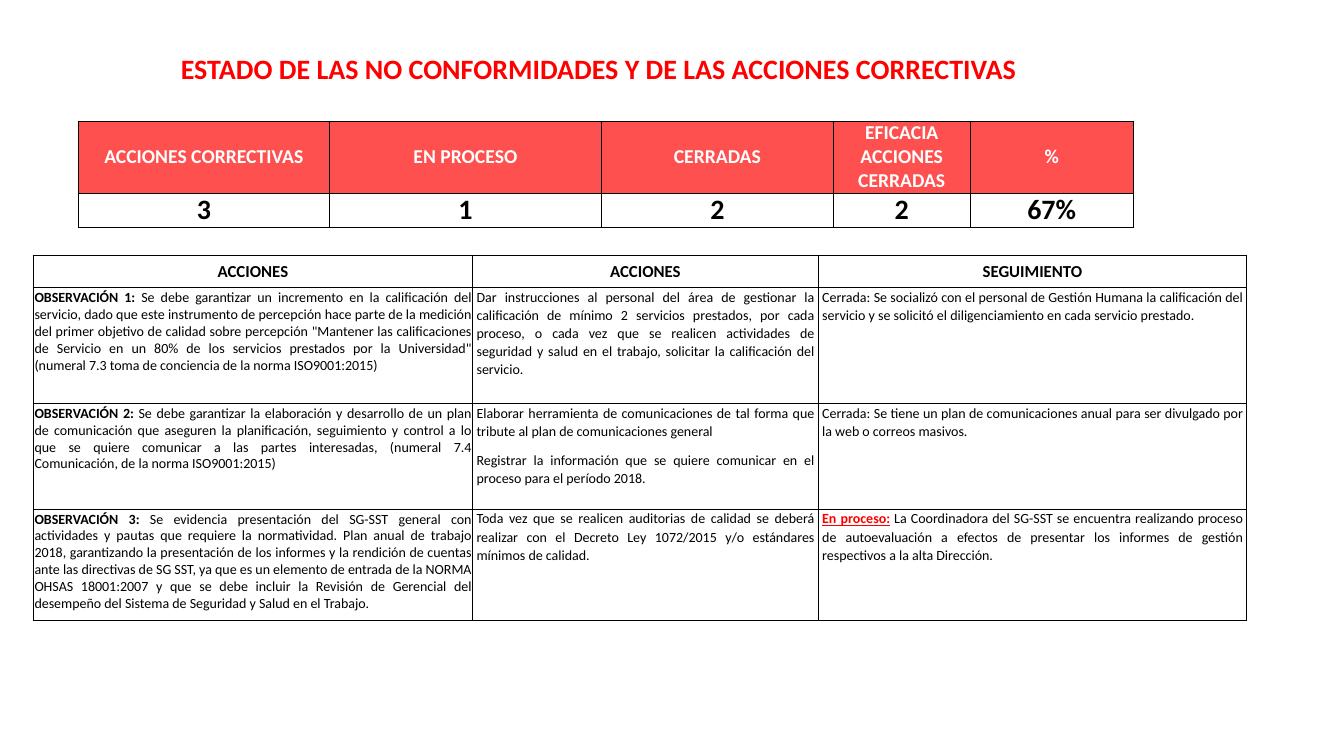
from lxml.etree import SubElement
from pptx import Presentation
from pptx.dml.color import RGBColor
from pptx.enum.text import MSO_ANCHOR, PP_ALIGN
from pptx.oxml.ns import qn
from pptx.util import Cm, Pt

COLORS = {"red": "FF0000", "header": "FF5050", "white": "FFFFFF", "black": "000000"}
FONT = "Calibri"

TITLE = "ESTADO DE LAS NO CONFORMIDADES Y DE LAS ACCIONES CORRECTIVAS"

SUMMARY = [
    ("ACCIONES CORRECTIVAS", "EN PROCESO", "CERRADAS", "EFICACIA ACCIONES CERRADAS", "%"),
    ("3", "1", "2", "2", "67%"),
]
SUMMARY_COLS = (6.32, 6.86, 5.84, 3.45, 4.11)
SUMMARY_ROWS = (1.81, 0.86)

ACTION_HEADERS = ("ACCIONES", "ACCIONES", "SEGUIMIENTO")
# Each row: observation (label, text), action paragraphs, follow-up (label, text)
ACTIONS = [
    (
        ("OBSERVACIÓN 1:", "Se debe garantizar un incremento en la calificación del servicio, dado que "
         "este instrumento de percepción hace parte de la medición del primer objetivo de calidad sobre "
         "percepción \"Mantener las calificaciones de Servicio en un 80% de los servicios prestados por "
         "la Universidad\" (numeral 7.3 toma de conciencia de la norma ISO9001:2015)"),
        ["Dar instrucciones al personal del área de gestionar la calificación de mínimo 2 servicios "
         "prestados, por cada proceso, o cada vez que se realicen actividades de seguridad y salud en el "
         "trabajo, solicitar la calificación del servicio."],
        ("", "Cerrada: Se socializó con el personal de Gestión Humana la calificación del servicio y se "
         "solicitó el diligenciamiento en cada servicio prestado."),
    ),
    (
        ("OBSERVACIÓN 2:", "Se debe garantizar la elaboración y desarrollo de un plan de comunicación que "
         "aseguren la planificación, seguimiento y control a lo que se quiere comunicar a las partes "
         "interesadas, (numeral 7.4 Comunicación, de la norma ISO9001:2015)"),
        ["Elaborar herramienta de comunicaciones de tal forma que tribute al plan de comunicaciones general",
         "Registrar la información que se quiere comunicar en el proceso para el período 2018."],
        ("", "Cerrada: Se tiene un plan de comunicaciones anual para ser divulgado por la web o correos "
         "masivos."),
    ),
    (
        ("OBSERVACIÓN 3:", "Se evidencia presentación del SG-SST general con actividades y pautas que "
         "requiere la normatividad. Plan anual de trabajo 2018, garantizando la presentación de los "
         "informes y la rendición de cuentas ante las directivas de SG SST, ya que es un elemento de "
         "entrada de la NORMA OHSAS 18001:2007 y que se debe incluir la Revisión de Gerencial del "
         "desempeño del Sistema de Seguridad y Salud en el Trabajo."),
        ["Toda vez que se realicen auditorias de calidad se deberá realizar con el Decreto Ley 1072/2015 "
         "y/o estándares mínimos de calidad."],
        ("En proceso:", "La Coordinadora del SG-SST se encuentra realizando proceso de autoevaluación a "
         "efectos de presentar los informes de gestión respectivos a la alta Dirección."),
    ),
]
ACTION_COLS = (11.07, 8.71, 10.8)
ACTION_ROWS = (0.82, 2.92, 2.67, 2.79)


def rgb(name):
    return RGBColor.from_string(COLORS[name])


def format_paragraph(p, size, color="black", bold=False, align=PP_ALIGN.CENTER, spacing=1.0, after=0):
    p.alignment, p.line_spacing, p.space_after = align, spacing, Pt(after)
    f = p.font
    f.name, f.size, f.bold = FONT, Pt(size), bold
    f.color.rgb = rgb(color)


def add_grid(slide, left, top, cols, rows):
    frame = slide.shapes.add_table(len(rows), len(cols), Cm(left), Cm(top), Cm(sum(cols)), Cm(sum(rows)))
    table = frame.table
    table.first_row = table.horz_banding = False
    for column, width in zip(table.columns, cols):
        column.width = Cm(width)
    for row, height in zip(table.rows, rows):
        row.height = Cm(height)
    return table


def format_cell(cell, line, fill="white", side=0, top=0, anchor=MSO_ANCHOR.TOP):
    cell.margin_left = cell.margin_right = Cm(side)
    cell.margin_top, cell.margin_bottom = Cm(top), 0
    cell.vertical_anchor = anchor
    tcPr = cell._tc.get_or_add_tcPr()
    for edge in ("a:lnL", "a:lnR", "a:lnT", "a:lnB"):
        ln = SubElement(tcPr, qn(edge), w=str(Pt(line)))
        SubElement(SubElement(ln, qn("a:solidFill")), qn("a:srgbClr"), val=COLORS["black"])
    cell.fill.solid()
    cell.fill.fore_color.rgb = rgb(fill)


def add_labelled(p, label, text):
    """Write an optional bold label followed by plain text; return the label run."""
    r = None
    if label:
        r = p.add_run()
        r.text, r.font.bold = label, True
        text = " " + text
    p.add_run().text = text
    return r


prs = Presentation()
prs.slide_width, prs.slide_height = Cm(33.87), Cm(19.05)
slide = prs.slides.add_slide(prs.slide_layouts[6])

# Actions table
table = add_grid(slide, 0.84, 6.43, ACTION_COLS, ACTION_ROWS)
for c, text in enumerate(ACTION_HEADERS):
    cell = table.cell(0, c)
    format_cell(cell, 1, side=0.1, anchor=MSO_ANCHOR.MIDDLE)
    cell.text = text
    format_paragraph(cell.text_frame.paragraphs[0], 12, bold=True, spacing=1.07)

body = dict(size=10, align=PP_ALIGN.JUSTIFY)
loose = dict(body, spacing=1.07, after=8)
for i, (observation, steps, follow_up) in enumerate(ACTIONS, start=1):
    cell = table.cell(i, 0)
    format_cell(cell, 1, side=0.03, top=0.03)
    p = cell.text_frame.paragraphs[0]
    format_paragraph(p, **body)
    add_labelled(p, *observation)

    cell = table.cell(i, 1)
    format_cell(cell, 1, side=0.1)
    cell.text = "\n".join(steps)
    for p in cell.text_frame.paragraphs:
        format_paragraph(p, **loose)

    cell = table.cell(i, 2)
    format_cell(cell, 1, side=0.1)
    p = cell.text_frame.paragraphs[0]
    format_paragraph(p, **loose)
    status = add_labelled(p, *follow_up)
    if status:
        status.font.underline = True
        status.font.color.rgb = rgb("red")

# Title
sp = slide.shapes.add_textbox(Cm(3.66), Cm(0.69), Cm(22.86), Cm(1.6))
tf = sp.text_frame
tf.word_wrap, tf.vertical_anchor = True, MSO_ANCHOR.BOTTOM
tf.text = TITLE
format_paragraph(tf.paragraphs[0], 20, "red", bold=True, spacing=0.9)

# Summary table
table = add_grid(slide, 1.98, 3.05, SUMMARY_COLS, SUMMARY_ROWS)
styles = [("header", 14, "white"), ("white", 20, "black")]
for i, (values, (fill, size, color)) in enumerate(zip(SUMMARY, styles)):
    for c, text in enumerate(values):
        cell = table.cell(i, c)
        format_cell(cell, 0.5, fill, anchor=MSO_ANCHOR.MIDDLE)
        cell.text = text
        format_paragraph(cell.text_frame.paragraphs[0], size, color, bold=True)

prs.save("out.pptx")
